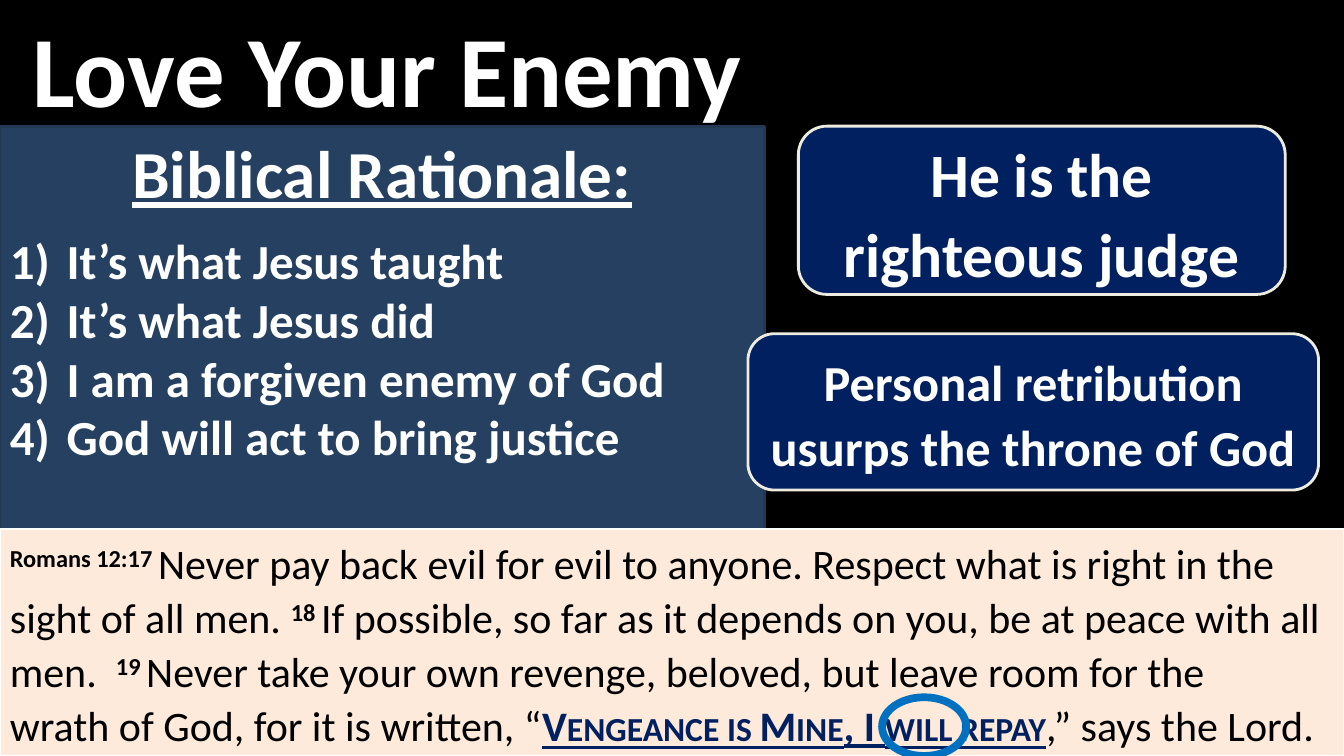
from pptx import Presentation
from pptx.dml.color import RGBColor
from pptx.enum.shapes import MSO_SHAPE
from pptx.enum.text import MSO_ANCHOR, PP_ALIGN
from pptx.oxml.ns import qn
from pptx.util import Cm, Pt
from lxml import etree

RECT = MSO_SHAPE.RECTANGLE
OVAL = MSO_SHAPE.OVAL
CALLOUT = MSO_SHAPE.ROUNDED_RECTANGULAR_CALLOUT
TOP, MIDDLE = MSO_ANCHOR.TOP, MSO_ANCHOR.MIDDLE
LEFT, CENTER = PP_ALIGN.LEFT, PP_ALIGN.CENTER

BLACK = RGBColor(0x00, 0x00, 0x00)
WHITE = RGBColor(0xFF, 0xFF, 0xFF)
SLATE = RGBColor(0x25, 0x40, 0x61)
SLATE_EDGE = RGBColor(0x23, 0x39, 0x53)
PEACH = RGBColor(0xFD, 0xEA, 0xDA)
NAVY = RGBColor(0x00, 0x20, 0x60)
CREAM = RGBColor(0xEE, 0xEC, 0xE1)
BLUE = RGBColor(0x00, 0x70, 0xC0)

FONT = "Calibri"
SLIDE_W, SLIDE_H = 33.87, 19.05
LINE_SPACING = 1.07
HANGING = Cm(1.43)
TIE, NO_BREAK_SPACE = "~", chr(160)

VERSE_NUMBER = {"bold": True, "attrs": {"baseline": "30000"}}
VERSE = {"bold": False}
QUOTE = {"bold": True, "underline": True, "color": NAVY}
QUOTE_CAPS = {**QUOTE, "attrs": {"cap": "small"}}

RATIONALE = [
    "It’s what Jesus taught",
    "It’s what Jesus did",
    "I am a forgiven enemy of God",
    "God will act to bring justice",
]
PASSAGE = [
    ("Romans 12:17~", VERSE_NUMBER),
    ("Never pay back evil for evil to anyone. Respect what is right in the sight of all men.~", VERSE),
    ("18~", VERSE_NUMBER),
    ("If possible,~so far as it depends on you,~be at peace with all men. ~", VERSE),
    ("19~", VERSE_NUMBER),
    ("Never take your own revenge, beloved, but leave room for the wrath~of God, for it is written, “", VERSE),
    ("Vengeance is Mine", QUOTE_CAPS),
    (", I~", QUOTE),
    ("will repay", QUOTE_CAPS),
    (",” says the Lord.~", VERSE),
]
CALLOUTS = [
    ("He is the righteous judge", 44, (20.12, 3.18, 12.27, 4.24)),
    ("Personal retribution usurps the throne of God", 36, (18.85, 8.41, 14.38, 3.94)),
]


def add_box(s, kind, box, fill=None, line=None, width=0, anchor=TOP):
    sp = s.shapes.add_shape(kind, *map(Cm, box))
    sp.shadow.inherit = False
    if fill is None:
        sp.fill.background()
    else:
        sp.fill.solid()
        sp.fill.fore_color.rgb = fill
    if line is None:
        sp.line.fill.background()
    else:
        sp.line.color.rgb = line
        sp.line.width = Pt(width)
    sp.text_frame.vertical_anchor = anchor
    return sp


def add_run(p, text, size, color=WHITE, bold=True, underline=False, attrs=None):
    r = p.add_run()
    r.text = text.replace(TIE, NO_BREAK_SPACE)
    font = {"name": FONT, "size": Pt(size), "bold": bold, "underline": underline}
    for name, value in font.items():
        setattr(r.font, name, value)
    r.font.color.rgb = color
    for name, value in (attrs or {}).items():
        r._r.get_or_add_rPr().set(name, value)


def format_paragraph(p, **values):
    for name, value in values.items():
        setattr(p, name, value)


def number_paragraph(p):
    pPr = p._p.get_or_add_pPr()
    pPr.set("marL", str(HANGING))
    pPr.set("indent", str(-HANGING))
    etree.SubElement(pPr, qn("a:buFont"), typeface="+mj-lt")
    etree.SubElement(pPr, qn("a:buAutoNum"), type="arabicParenR")


def add_title(s):
    sp = add_box(s, RECT, (0, 0, SLIDE_W, 3.38), BLACK, anchor=MIDDLE)
    color = sp.fill._xPr.find(qn("a:solidFill"))[0]
    etree.SubElement(color, qn("a:alpha"), val="64000")
    tf = sp.text_frame
    tf.margin_left = Cm(0.83)
    p = tf.paragraphs[0]
    format_paragraph(p, alignment=LEFT)
    add_run(p, "Love Your Enemy", 72)


def add_rationale(s):
    sp = add_box(s, RECT, (0, 3.18, 19.26, 15.87), SLATE, SLATE_EDGE, 2)
    tf = sp.text_frame
    p = tf.paragraphs[0]
    format_paragraph(p, alignment=CENTER, space_after=Pt(13.4))
    add_run(p, "Biblical Rationale:", 48, underline=True)
    for reason in RATIONALE:
        p = tf.add_paragraph()
        format_paragraph(p, alignment=LEFT)
        number_paragraph(p)
        add_run(p, reason, 35)


def add_passage(s):
    sp = add_box(s, RECT, (0, 13.34, SLIDE_W, 5.71), PEACH, WHITE, 1.5)
    p = sp.text_frame.paragraphs[0]
    format_paragraph(p, alignment=LEFT, line_spacing=LINE_SPACING)
    for text, style in PASSAGE:
        add_run(p, text, 30, **{"color": BLACK, **style})


def add_callout(s, text, size, box):
    sp = add_box(s, CALLOUT, box, NAVY, CREAM, 2, MIDDLE)
    for i, value in enumerate((-0.22, 0.5, 0.17)):
        sp.adjustments[i] = value
    p = sp.text_frame.paragraphs[0]
    format_paragraph(p, alignment=CENTER, line_spacing=LINE_SPACING)
    add_run(p, text, size)


def main():
    prs = Presentation()
    prs.slide_width, prs.slide_height = Cm(SLIDE_W), Cm(SLIDE_H)
    s = prs.slides.add_slide(prs.slide_layouts[6])
    s.background.fill.solid()
    s.background.fill.fore_color.rgb = BLACK
    add_title(s)
    add_rationale(s)
    add_passage(s)
    for text, size, box in CALLOUTS:
        add_callout(s, text, size, box)
    add_box(s, OVAL, (22.23, 17.57, 2.12, 1.48), line=BLUE, width=5.5)
    prs.save("out.pptx")


if __name__ == "__main__":
    main()
